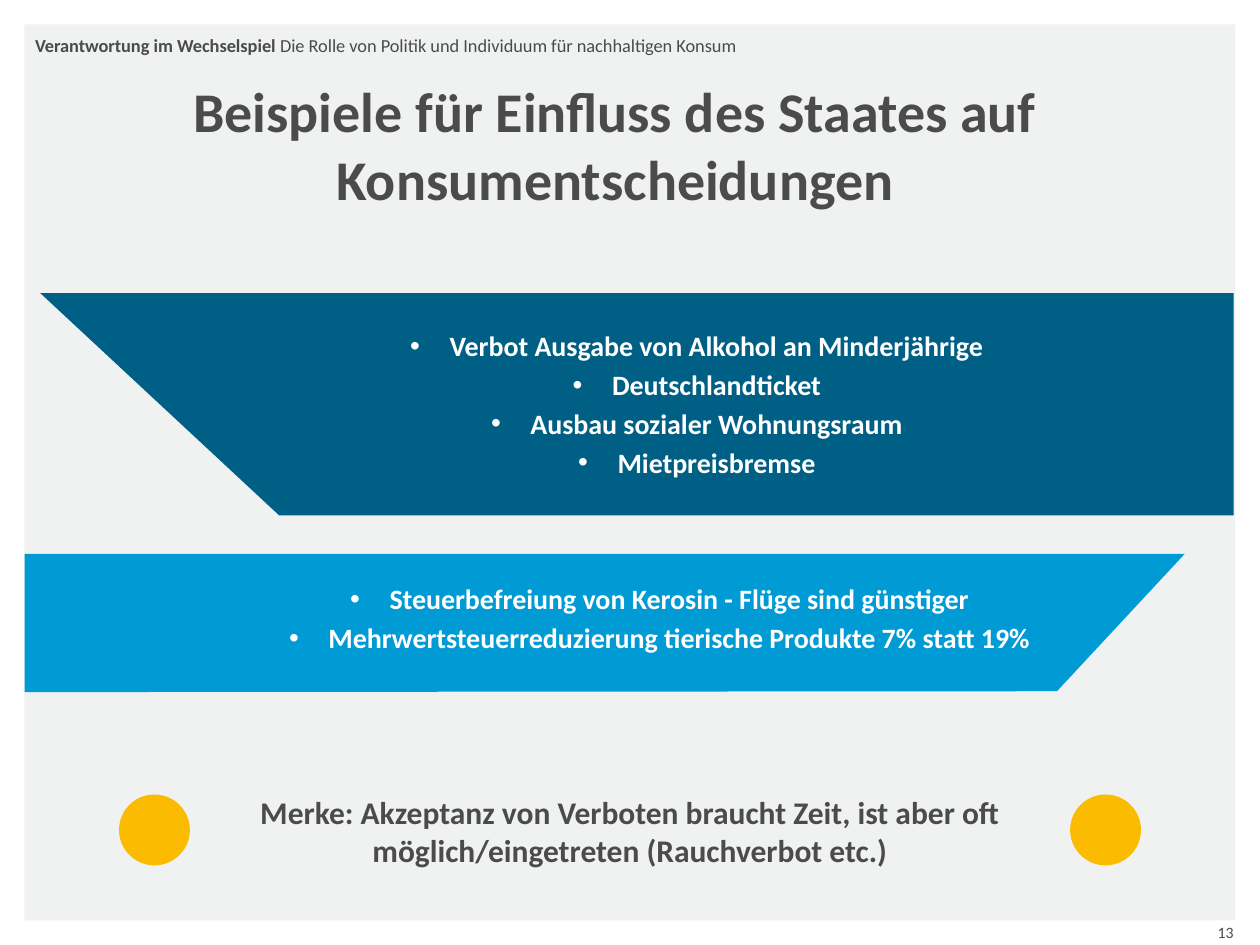
from lxml import etree
from pptx import Presentation
from pptx.dml.color import RGBColor
from pptx.enum import shapes, text
from pptx.oxml.ns import qn
from pptx.util import Pt

WHITE = RGBColor(0xFF, 0xFF, 0xFF)
PANEL_GREY = RGBColor(0xF0, 0xF1, 0xF1)
TEXT_GREY = RGBColor(0x4B, 0x4B, 0x4D)
YELLOW = RGBColor(0xFA, 0xBB, 0x00)
DARK_BLUE = RGBColor(0x00, 0x5F, 0x85)
LIGHT_BLUE = RGBColor(0x00, 0x9B, 0xD5)
CENTER = text.PP_ALIGN.CENTER
BULLET_INDENT = Pt(22.5)


def write_text(shape, paragraphs, size, color=TEXT_GREY, align=None, inset=0,
               anchor=text.MSO_ANCHOR.TOP, bullet=False):
    frame = shape.text_frame
    frame.word_wrap = True
    frame.auto_size = text.MSO_AUTO_SIZE.NONE
    frame.vertical_anchor = anchor
    frame.margin_left = frame.margin_right = Pt(2 * inset)
    frame.margin_top = frame.margin_bottom = Pt(inset)
    for index, runs in enumerate(paragraphs):
        paragraph = frame.add_paragraph() if index else frame.paragraphs[0]
        paragraph.alignment = align
        paragraph.space_before = Pt(3 if index else 0)
        if bullet:
            properties = paragraph._p.get_or_add_pPr()
            properties.set("marL", str(BULLET_INDENT))
            properties.set("indent", str(-BULLET_INDENT))
            etree.SubElement(properties, qn("a:buFont"), typeface="Arial")
            etree.SubElement(properties, qn("a:buChar"), char="•")
        for content, bold in runs:
            run = paragraph.add_run()
            run.text = content
            run.font.name = "Calibri"
            run.font.size = Pt(size)
            run.font.bold = bold
            run.font.color.rgb = color


def paint(shape, color):
    shape.shadow.inherit = False
    shape.fill.solid()
    shape.fill.fore_color.rgb = color
    shape.line.fill.background()


presentation = Presentation()
presentation.slide_width, presentation.slide_height = Pt(720), Pt(540)
slide = presentation.slides.add_slide(presentation.slide_layouts[5])

panel = slide.shapes.add_shape(
    shapes.MSO_SHAPE.RECTANGLE, Pt(14), Pt(14), Pt(692), Pt(512))
paint(panel, PANEL_GREY)

title = slide.shapes.title
title.left, title.top, title.width, title.height = Pt(20), Pt(44), Pt(663), Pt(80)
write_text(title, [[("Beispiele für Einfluss des Staates auf Konsumentscheidungen", True)]],
           32, align=CENTER)
panel._element.addnext(title._element)

for left in (68, 611.5):
    dot = slide.shapes.add_shape(
        shapes.MSO_SHAPE.OVAL, Pt(left), Pt(454), Pt(40.5), Pt(40.5))
    paint(dot, YELLOW)

bands = [
    (DARK_BLUE, [(23, 167.5), (159.5, 294.5), (705, 294.5), (705, 167.5)]),
    (LIGHT_BLUE, [(14, 316.5), (14, 395.5), (604, 395), (677, 316.5)]),
]
for color, corners in bands:
    start, *others = [(Pt(x), Pt(y)) for x, y in corners]
    builder = slide.shapes.build_freeform(*start)
    builder.add_line_segments(others, close=True)
    paint(builder.convert_to_shape(), color)

header = slide.shapes.add_textbox(Pt(20), Pt(19.5), Pt(663), Pt(18))
write_text(header, [[
    ("Verantwortung im Wechselspiel ", True),
    ("Die Rolle von Politik und Individuum für nachhaltigen Konsum", False),
]], 10.5)

bullet_lists = [
    (188, 473, 86, [
        "Verbot Ausgabe von Alkohol an Minderjährige",
        "Deutschlandticket",
        "Ausbau sozialer Wohnungsraum",
        "Mietpreisbremse",
    ]),
    (332.5, 430.5, 47, [
        "Steuerbefreiung von Kerosin - Flüge sind günstiger",
        "Mehrwertsteuerreduzierung tierische Produkte 7% statt 19%",
    ]),
]
for top, width, height, items in bullet_lists:
    box = slide.shapes.add_textbox(Pt(161.75), Pt(top), Pt(width), Pt(height))
    write_text(box, [[(item, True)] for item in items], 16,
               color=WHITE, align=CENTER, bullet=True)

takeaway = slide.shapes.add_textbox(Pt(116), Pt(449.5), Pt(488), Pt(51))
write_text(takeaway, [[(
    "Merke: Akzeptanz von Verboten braucht Zeit, ist aber oft "
    "möglich/eingetreten (Rauchverbot etc.)", True)]],
    18, align=CENTER, inset=3.6)

page_number = slide.shapes.add_textbox(Pt(661), Pt(526), Pt(44), Pt(13.5))
write_text(page_number, [[("13", False)]], 9, align=text.PP_ALIGN.RIGHT,
           anchor=text.MSO_ANCHOR.MIDDLE)

presentation.save("out.pptx")
